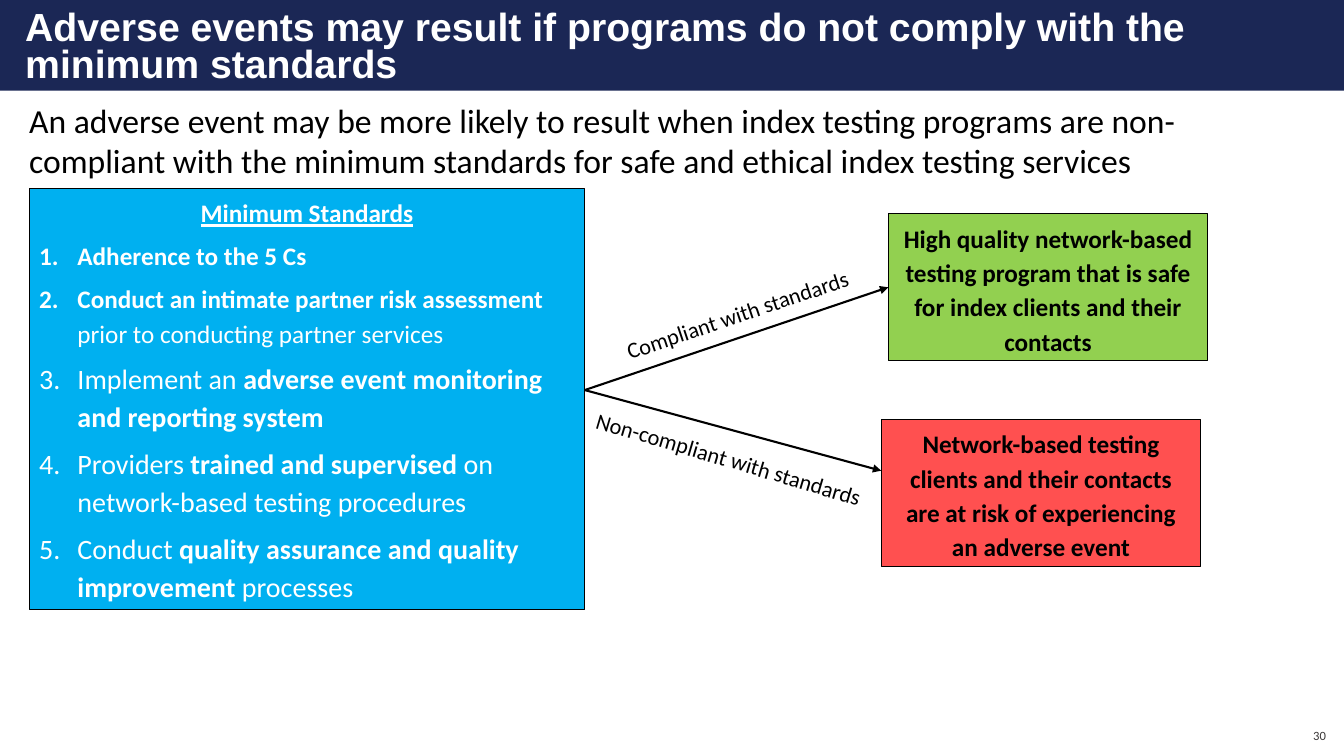
from lxml import etree
from pptx import Presentation
from pptx import util as u
from pptx.dml.color import RGBColor
from pptx.enum import shapes, text
from pptx.oxml.ns import qn

COLORS = {
    "navy": "1B2755",
    "blue": "00B0F0",
    "green": "92D050",
    "red": "FF5050",
    "black": "000000",
    "white": "FFFFFF",
    "gray": "3B3838",
}
CENTER = text.PP_ALIGN.CENTER
LEFT = text.PP_ALIGN.LEFT

STANDARDS = [
    (18, [("Adherence to the 5 Cs", True)]),
    (18, [("Conduct an intimate partner risk assessment", True),
          (" prior to conducting partner services", False)]),
    (20, [("Implement an ", False),
          ("adverse event monitoring and reporting system", True)]),
    (20, [("Providers ", False), ("trained and supervised ", True),
          ("on network-based testing procedures", False)]),
    (20, [("Conduct ", False), ("quality assurance and quality improvement", True),
          (" processes", False)]),
]


def color(name):
    return RGBColor.from_string(COLORS[name])


class SlideBuilder:
    def __init__(self, presentation):
        self.slide = presentation.slides.add_slide(presentation.slide_layouts[5])
        self.shapes = self.slide.shapes

    def format_runs(self, paragraph, size, ink, bold=False, font="Calibri"):
        for run in paragraph.runs:
            run.font.name = font
            run.font.size = u.Pt(size)
            run.font.bold = bold
            run.font.color.rgb = color(ink)

    def space(self, paragraph, before=0):
        paragraph.line_spacing = 1.14
        paragraph.space_before = u.Pt(before)
        paragraph.space_after = u.Pt(3)

    def frame(self, shape, margins=(0.1, 0.05), anchor=text.MSO_ANCHOR.TOP):
        frame = shape.text_frame
        frame.word_wrap = True
        frame.auto_size = text.MSO_AUTO_SIZE.NONE
        frame.vertical_anchor = anchor
        frame.margin_left = frame.margin_right = u.Inches(margins[0])
        frame.margin_top = frame.margin_bottom = u.Inches(margins[1])
        return frame

    def title(self, words, box):
        title = self.shapes.title
        title.left, title.top, title.width, title.height = map(u.Inches, box)
        frame = self.frame(title, (0, 0))
        frame.text = words
        paragraph = frame.paragraphs[0]
        paragraph.alignment = LEFT
        paragraph.line_spacing = 0.8
        self.format_runs(paragraph, 28, "white", True, "Arial")

    def rectangle(self, box, fill, outline=None):
        shape = self.shapes.add_shape(shapes.MSO_SHAPE.RECTANGLE, *map(u.Inches, box))
        shape.shadow.inherit = False
        shape.fill.solid()
        shape.fill.fore_color.rgb = color(fill)
        if outline:
            shape.line.color.rgb = color(outline)
            shape.line.width = u.Pt(0.75)
        else:
            shape.line.fill.background()
        return shape

    def banner(self, box):
        shape = self.rectangle(box, "navy")
        self.shapes._spTree.insert(2, shape._element)

    def textbox(self, words, box, size, ink="black", align=LEFT, margins=(0.1, 0.05),
                anchor=text.MSO_ANCHOR.TOP, rotation=0):
        shape = self.shapes.add_textbox(*map(u.Inches, box))
        shape.rotation = rotation
        frame = self.frame(shape, margins, anchor)
        frame.text = words
        paragraph = frame.paragraphs[0]
        paragraph.alignment = align
        self.format_runs(paragraph, size, ink)
        return paragraph

    def path_label(self, words, box, rotation):
        self.space(self.textbox(words, box, 16, align=CENTER, rotation=rotation))

    def outcome(self, words, box, fill):
        shape = self.rectangle(box, fill, "black")
        frame = self.frame(shape)
        frame.text = words
        paragraph = frame.paragraphs[0]
        paragraph.alignment = CENTER
        self.space(paragraph)
        self.format_runs(paragraph, 18, "black", True)
        return shape

    def numbered_panel(self, heading, items, box):
        frame = self.frame(self.rectangle(box, "blue", "black"))
        frame.text = heading
        paragraph = frame.paragraphs[0]
        paragraph.alignment = CENTER
        self.space(paragraph)
        self.format_runs(paragraph, 18, "white", True)
        paragraph.runs[0].font.underline = True
        for size, parts in items:
            paragraph = frame.add_paragraph()
            paragraph.alignment = LEFT
            self.space(paragraph, 3)
            properties = paragraph._p.get_or_add_pPr()
            properties.set("marL", str(u.Inches(0.38)))
            properties.set("indent", str(u.Inches(-0.38)))
            etree.SubElement(properties, qn("a:buAutoNum"), type="arabicPeriod")
            for words, bold in parts:
                paragraph.add_run().text = words
            self.format_runs(paragraph, size, "white")
            for run, (words, bold) in zip(paragraph.runs, parts):
                run.font.bold = bold

    def arrow(self, start, end):
        connector = self.shapes.add_connector(
            shapes.MSO_CONNECTOR.STRAIGHT, *map(u.Inches, start + end))
        connector.line.color.rgb = color("black")
        connector.line.width = u.Pt(1.5)
        etree.SubElement(connector.line._get_or_add_ln(), qn("a:tailEnd"), type="triangle")
        etree.SubElement(connector._element.spPr, qn("a:effectLst"))
        return connector


def main():
    presentation = Presentation()
    presentation.slide_width = u.Inches(13.33)
    presentation.slide_height = u.Inches(7.5)
    builder = SlideBuilder(presentation)

    builder.banner((0, 0, 13.33, 0.9))
    builder.title("Adverse events may result if programs do not comply with the "
                  "minimum standards", (0.25, 0.11, 12.79, 0.75))
    builder.textbox("30", (12.61, 7.1, 0.64, 0.4), 9, "gray", text.PP_ALIGN.RIGHT,
                    anchor=text.MSO_ANCHOR.MIDDLE)
    builder.textbox("An adverse event may be more likely to result when index testing "
                    "programs are non-compliant with the minimum standards for safe and "
                    "ethical index testing services", (0.29, 0.99, 12.7, 0.85), 24,
                    margins=(0, 0))
    builder.numbered_panel("Minimum Standards", STANDARDS, (0.29, 1.87, 5.51, 4.18))

    fork = (5.8, 3.87)
    compliant = builder.arrow(fork, (8.81, 2.85))
    builder.arrow(fork, (8.74, 4.67))
    safe = builder.outcome("High quality network-based testing program that is safe for "
                           "index clients and their contacts",
                           (8.81, 2.12, 3.17, 1.46), "green")
    compliant.end_connect(safe, 1)
    builder.path_label("Compliant with standards", (5.72, 2.9, 3.17, 0.39), 341.4)
    builder.path_label("Non-compliant with standards", (5.65, 4.33, 3.17, 0.39), 16.5)
    builder.outcome("Network-based testing clients and their contacts are at risk of "
                    "experiencing an adverse event", (8.74, 4.16, 3.17, 1.46), "red")

    presentation.save("out.pptx")


if __name__ == "__main__":
    main()
